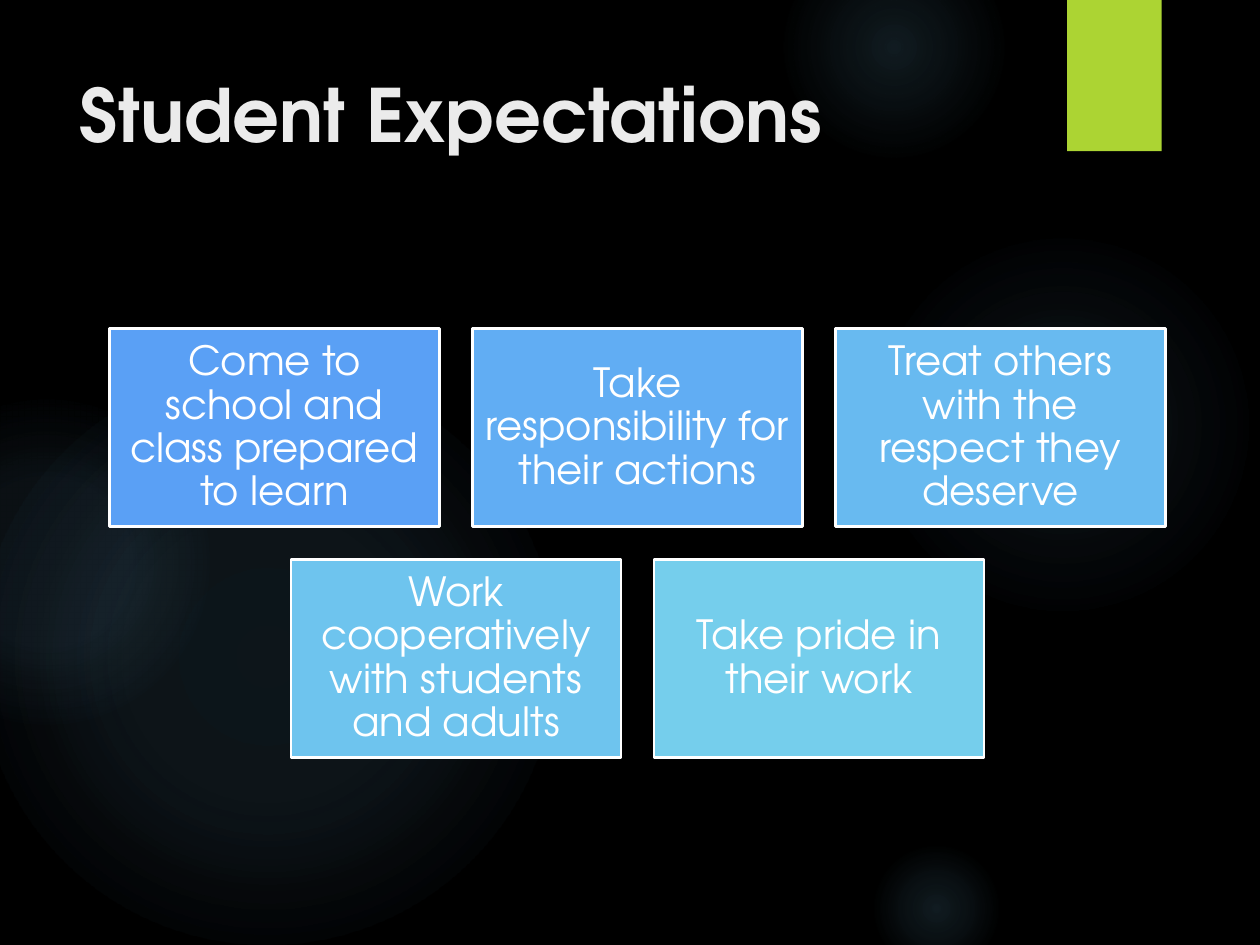
from dataclasses import dataclass

from lxml import etree
from pptx import Presentation
from pptx.dml.color import RGBColor
from pptx.enum.shapes import MSO_SHAPE
from pptx.enum.text import MSO_ANCHOR, PP_ALIGN
from pptx.oxml.ns import qn
from pptx.util import Inches, Pt

RECTANGLE, ELLIPSE = MSO_SHAPE.RECTANGLE, MSO_SHAPE.OVAL
TOP, MIDDLE = MSO_ANCHOR.TOP, MSO_ANCHOR.MIDDLE
LEFT, CENTER = PP_ALIGN.LEFT, PP_ALIGN.CENTER

SLIDE_WIDTH, SLIDE_HEIGHT = 10, 7.5
FONT = "TeX Gyre Adventor"
BLACK, WHITE, OFF_WHITE = "000000", "FFFFFF", "EBEBEB"
LIME, GLOW_BLUE = "ACD433", "7AC4F0"

CARD_WIDTH, CARD_HEIGHT, CARD_GAP = 2.62, 1.57, 0.26
CARDS_CENTER, CARDS_TOP = 5.06, 2.61


@dataclass(frozen=True)
class Glow:
    """A round light; each stop is (position, opacity) in percent."""
    left: float
    top: float
    diameter: float
    stops: tuple[tuple[int, int], ...]


@dataclass(frozen=True)
class Card:
    text: str
    color: str


GLOWS = (
    Glow(6.89, 1.83, 3.08, ((0, 7), (36, 6), (69, 0))),
    Glow(6.22, -0.5, 1.75, ((0, 14), (36, 7), (73, 0))),
    Glow(6.89, 6.67, 1.08, ((0, 14), (36, 7), (66, 0))),
    Glow(-0.17, 2.92, 4.58, ((0, 11), (36, 10), (75, 0))),
    Glow(-0.92, 3.17, 2.58, ((0, 8), (36, 8), (72, 0))),
)

CARD_ROWS = (
    (
        Card("Come to school and class prepared to learn", "5AA0F5"),
        Card("Take responsibility for their actions", "61ADF3"),
        Card("Treat others with the respect they deserve", "68BAF0"),
    ),
    (
        Card("Work cooperatively with students and adults", "6EC4EE"),
        Card("Take pride in their work", "75CEEC"),
    ),
)


def rgb(color: str) -> RGBColor:
    return RGBColor.from_string(color)


def add_filled_shape(slide, kind, left: float, top: float, width: float,
                     height: float, color: str):
    shape = slide.shapes.add_shape(
        kind, Inches(left), Inches(top), Inches(width), Inches(height))
    shape.shadow.inherit = False
    shape.fill.solid()
    shape.fill.fore_color.rgb = rgb(color)
    shape.line.fill.background()
    return shape


def write_text(shape, text: str, *, size: float, color: str, bold: bool = False,
               align=LEFT, anchor=TOP, line_spacing: float = 1.0,
               inset: float | None = None) -> None:
    frame = shape.text_frame
    frame.word_wrap = True
    frame.vertical_anchor = anchor
    if inset is not None:
        frame.margin_left = frame.margin_right = Inches(inset)
        frame.margin_top = frame.margin_bottom = Inches(inset)
    paragraph = frame.paragraphs[0]
    paragraph.alignment = align
    paragraph.line_spacing = line_spacing
    run = paragraph.add_run()
    run.text = text
    run.font.name = FONT
    run.font.size = Pt(size)
    run.font.bold = bold
    run.font.color.rgb = rgb(color)


def add_glow(slide, glow: Glow) -> None:
    """Draw an ellipse whose radial gradient fades to transparent."""
    ellipse = add_filled_shape(slide, ELLIPSE, glow.left, glow.top,
                               glow.diameter, glow.diameter, GLOW_BLUE)
    gradient = etree.Element(qn("a:gradFill"), rotWithShape="1")
    stop_list = etree.SubElement(gradient, qn("a:gsLst"))
    for position, opacity in glow.stops:
        stop = etree.SubElement(stop_list, qn("a:gs"), pos=str(position * 1000))
        stop_color = etree.SubElement(stop, qn("a:srgbClr"), val=GLOW_BLUE)
        etree.SubElement(stop_color, qn("a:alpha"), val=str(opacity * 1000))
    path = etree.SubElement(gradient, qn("a:path"), path="circle")
    etree.SubElement(path, qn("a:fillToRect"),
                     {side: "50000" for side in "ltrb"})
    properties = ellipse._element.spPr
    properties.replace(properties.find(qn("a:solidFill")), gradient)


def add_card_row(slide, cards: tuple[Card, ...], row: int) -> None:
    """Draw a row of equal cards centred on the card area."""
    step = CARD_WIDTH + CARD_GAP
    row_left = CARDS_CENTER - (len(cards) * step - CARD_GAP) / 2
    top = CARDS_TOP + row * (CARD_HEIGHT + CARD_GAP)
    for column, card in enumerate(cards):
        box = add_filled_shape(slide, RECTANGLE, row_left + column * step, top,
                               CARD_WIDTH, CARD_HEIGHT, card.color)
        box.line.color.rgb = rgb(WHITE)
        box.line.width = Pt(1.5)
        write_text(box, card.text, size=23, color=WHITE, align=CENTER,
                   anchor=MIDDLE, line_spacing=0.9, inset=0.1)


def main() -> None:
    presentation = Presentation()
    presentation.slide_width = Inches(SLIDE_WIDTH)
    presentation.slide_height = Inches(SLIDE_HEIGHT)
    slide = presentation.slides.add_slide(presentation.slide_layouts[6])
    slide.background.fill.solid()
    slide.background.fill.fore_color.rgb = rgb(BLACK)

    for glow in GLOWS:
        add_glow(slide, glow)
    add_filled_shape(slide, RECTANGLE, 8.47, 0, 0.75, 0.16 * SLIDE_HEIGHT, LIME)

    title = slide.shapes.add_textbox(
        Inches(0.53), Inches(0.5), Inches(7.71), Inches(1.53))
    write_text(title, "Student Expectations", size=42, color=OFF_WHITE, bold=True)

    for row, cards in enumerate(CARD_ROWS):
        add_card_row(slide, cards, row)

    presentation.save("out.pptx")


if __name__ == "__main__":
    main()
